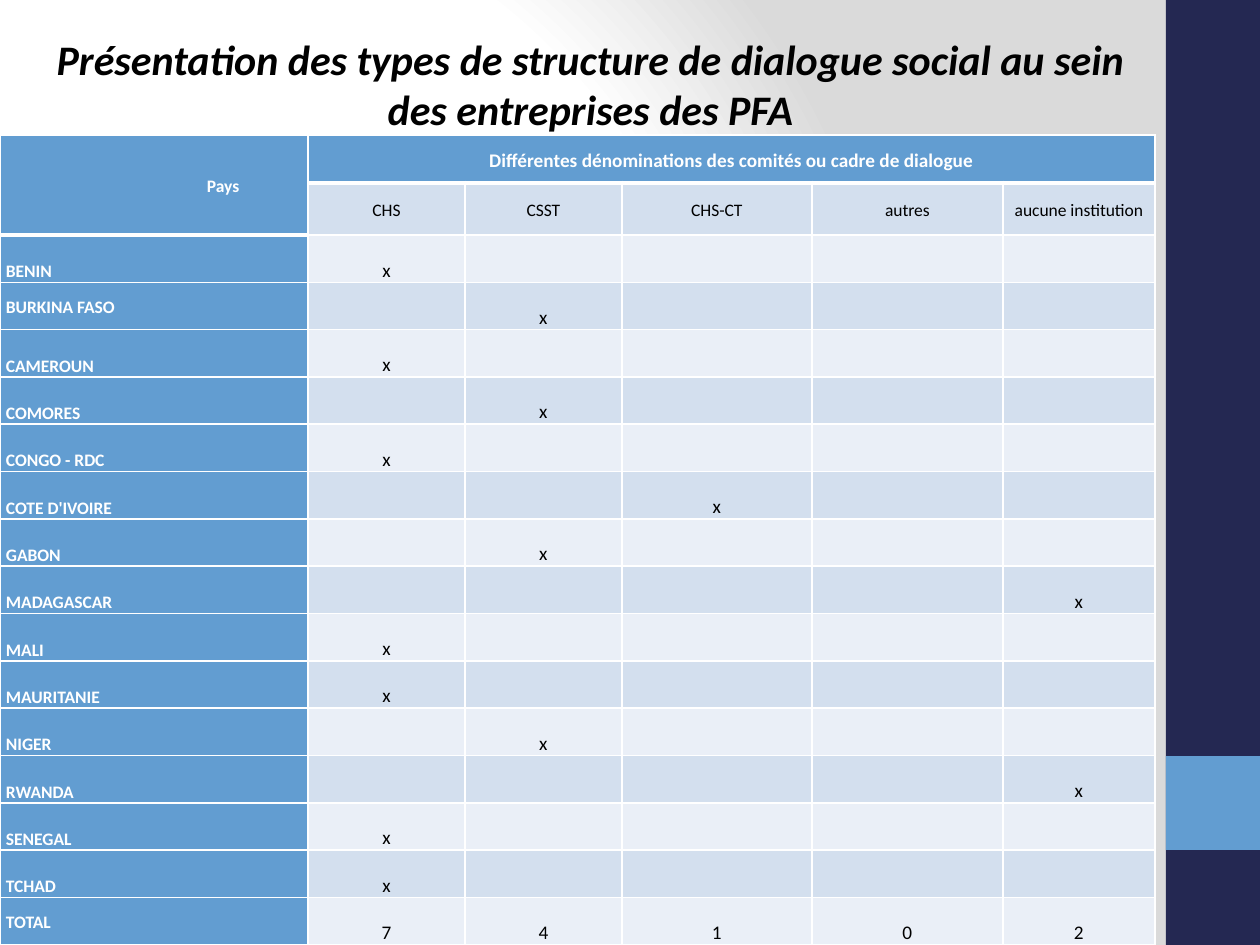
from pptx import Presentation
from pptx.dml.color import RGBColor
from pptx.enum.shapes import MSO_SHAPE
from pptx.enum.text import MSO_ANCHOR as Anchor, PP_ALIGN as Align
from pptx.oxml import parse_xml
from pptx.oxml.ns import nsdecls
from pptx.util import Emu, Pt

NAVY = RGBColor(0x24, 0x28, 0x52)
BLUE = RGBColor(0x62, 0x9D, 0xD1)
BAND = RGBColor(0xD3, 0xDF, 0xEE)
PALE = RGBColor(0xEA, 0xEF, 0xF7)
SILVER = RGBColor(0xDA, 0xDA, 0xDA)
WHITE = RGBColor(0xFF, 0xFF, 0xFF)
BLACK = RGBColor(0, 0, 0)

TITLE = "Présentation des types de structure de dialogue social au sein des entreprises des PFA"
STRUCTURES = ["CHS", "CSST", "CHS-CT", "autres", "aucune institution"]
COUNTRIES = [
    ("BENIN", "CHS"), ("BURKINA FASO", "CSST"), ("CAMEROUN", "CHS"),
    ("COMORES", "CSST"), ("CONGO - RDC", "CHS"), ("COTE D'IVOIRE", "CHS-CT"),
    ("GABON", "CSST"), ("MADAGASCAR", "aucune institution"), ("MALI", "CHS"),
    ("MAURITANIE", "CHS"), ("NIGER", "CSST"), ("RWANDA", "aucune institution"),
    ("SENEGAL", "CHS"), ("TCHAD", "CHS"),
]
COLUMN_WIDTHS = [308, 157, 157, 190, 191, 152]
HEADER_HEIGHTS = [48, 52]
TABLE_TOP, TABLE_HEIGHT = 135, 810


def px(length):
    return Emu(round(length * 914400 / 126))


class SlideBuilder:
    """Holds the style and the current slide, and adds elements to it."""

    font_name = "Calibri"

    def __init__(self, presentation):
        self.slide = presentation.slides.add_slide(presentation.slide_layouts[6])

    def background(self, stops, focus):
        stop_xml = "".join(
            f'<a:gs pos="{position * 1000}"><a:srgbClr val="{color}"/></a:gs>'
            for position, color in stops)
        left, top, right, bottom = (value * 1000 for value in focus)
        self.slide.element.cSld.insert(0, parse_xml(
            f'<p:bg {nsdecls("p", "a")}><p:bgPr><a:gradFill rotWithShape="1">'
            f'<a:gsLst>{stop_xml}</a:gsLst><a:path path="circle">'
            f'<a:fillToRect l="{left}" t="{top}" r="{right}" b="{bottom}"/>'
            '</a:path></a:gradFill><a:effectLst/></p:bgPr></p:bg>'))

    def rectangle(self, left, top, width, height, color):
        shape = self.slide.shapes.add_shape(
            MSO_SHAPE.RECTANGLE, px(left), px(top), px(width), px(height))
        shape.shadow.inherit = False
        shape.fill.solid()
        shape.fill.fore_color.rgb = color
        shape.line.fill.background()

    def style_text(self, paragraph, text, size, color, bold=False, italic=False,
                   align=Align.LEFT):
        paragraph.text = text
        paragraph.alignment = align
        font = paragraph.font
        font.name, font.size = self.font_name, Pt(size)
        font.bold, font.italic = bold, italic
        font.color.rgb = color

    def title(self, left, top, width, height, text):
        frame = self.slide.shapes.add_textbox(
            px(left), px(top), px(width), px(height)).text_frame
        frame.word_wrap = True
        self.style_text(frame.paragraphs[0], text, 24, BLACK, True, True, Align.CENTER)

    def table(self, left, top, height, widths, header_heights, row_count):
        table = self.slide.shapes.add_table(
            row_count, len(widths), px(left), px(top), px(sum(widths)), px(height)).table
        table.first_row = table.horz_banding = False
        for column, width in zip(table.columns, widths):
            column.width = px(width)
        body_height = (height - sum(header_heights)) / (row_count - len(header_heights))
        for index, row in enumerate(table.rows):
            row.height = px(header_heights[index] if index < len(header_heights) else body_height)
        return table

    def cell(self, cell, text, fill, size=11, color=BLACK, bold=False,
             align=Align.CENTER, anchor=Anchor.BOTTOM, indent=6):
        cell.margin_left, cell.margin_right = px(indent), px(6)
        cell.margin_top = cell.margin_bottom = 0
        cell.vertical_anchor = anchor
        cell.fill.solid()
        cell.fill.fore_color.rgb = fill
        paragraph = cell.text_frame.paragraphs[0]
        paragraph.line_spacing = 1.15
        self.style_text(paragraph, text, size, color, bold, align=align)

    def borders(self, table, heavy_rows):
        for row_index, row in enumerate(table.rows):
            for column_index, cell in enumerate(row.cells):
                heavy_row = heavy_rows[min(column_index, 1)]
                widths = {"L": 1, "R": 1,
                          "T": 3 if row_index == heavy_row else 1,
                          "B": 3 if row_index + 1 == heavy_row else 1}
                properties = cell._tc.get_or_add_tcPr()
                for position, (side, width) in enumerate(widths.items()):
                    properties.insert(position, parse_xml(
                        f'<a:ln{side} {nsdecls("a")} w="{Pt(width)}"><a:solidFill>'
                        f'<a:srgbClr val="{WHITE}"/></a:solidFill></a:ln{side}>'))


def fill_table(builder, table):
    heading = dict(color=WHITE, bold=True)
    builder.cell(table.cell(0, 0), "Pays", BLUE, 10, align=Align.LEFT,
                 anchor=Anchor.MIDDLE, indent=207, **heading)
    builder.cell(table.cell(0, 1), "Différentes dénominations des comités ou cadre de dialogue",
                 BLUE, anchor=Anchor.MIDDLE, **heading)
    for column, name in enumerate(STRUCTURES, 1):
        builder.cell(table.cell(1, column), name, BAND, 10, anchor=Anchor.MIDDLE)

    chosen = [structure for _, structure in COUNTRIES]
    records = [(country, ["x" if name == structure else "" for name in STRUCTURES])
               for country, structure in COUNTRIES]
    records.append(("TOTAL", [str(chosen.count(name)) for name in STRUCTURES]))
    for row, (label, values) in enumerate(records, 2):
        anchor = Anchor.MIDDLE if label in ("BURKINA FASO", "TOTAL") else Anchor.BOTTOM
        builder.cell(table.cell(row, 0), label, BLUE, 10, align=Align.LEFT,
                     anchor=anchor, **heading)
        for column, value in enumerate(values, 1):
            builder.cell(table.cell(row, column), value, BAND if row % 2 else PALE)

    builder.borders(table, heavy_rows=(2, 1))
    table.cell(0, 0).merge(table.cell(1, 0))
    table.cell(0, 1).merge(table.cell(0, len(STRUCTURES)))


def main():
    presentation = Presentation()
    presentation.slide_width, presentation.slide_height = px(1260), px(945)
    builder = SlideBuilder(presentation)
    builder.background([(0, WHITE), (75, WHITE), (100, SILVER)], (20, 50, 100, 50))
    builder.rectangle(1166, 0, 94, 945, NAVY)
    builder.rectangle(1166, 756, 94, 94, BLUE)
    table = builder.table(0, TABLE_TOP, TABLE_HEIGHT, COLUMN_WIDTHS, HEADER_HEIGHTS,
                          len(HEADER_HEIGHTS) + len(COUNTRIES) + 1)
    fill_table(builder, table)
    builder.title(35, 27, 1111, 190, TITLE)
    presentation.save("out.pptx")


if __name__ == "__main__":
    main()
